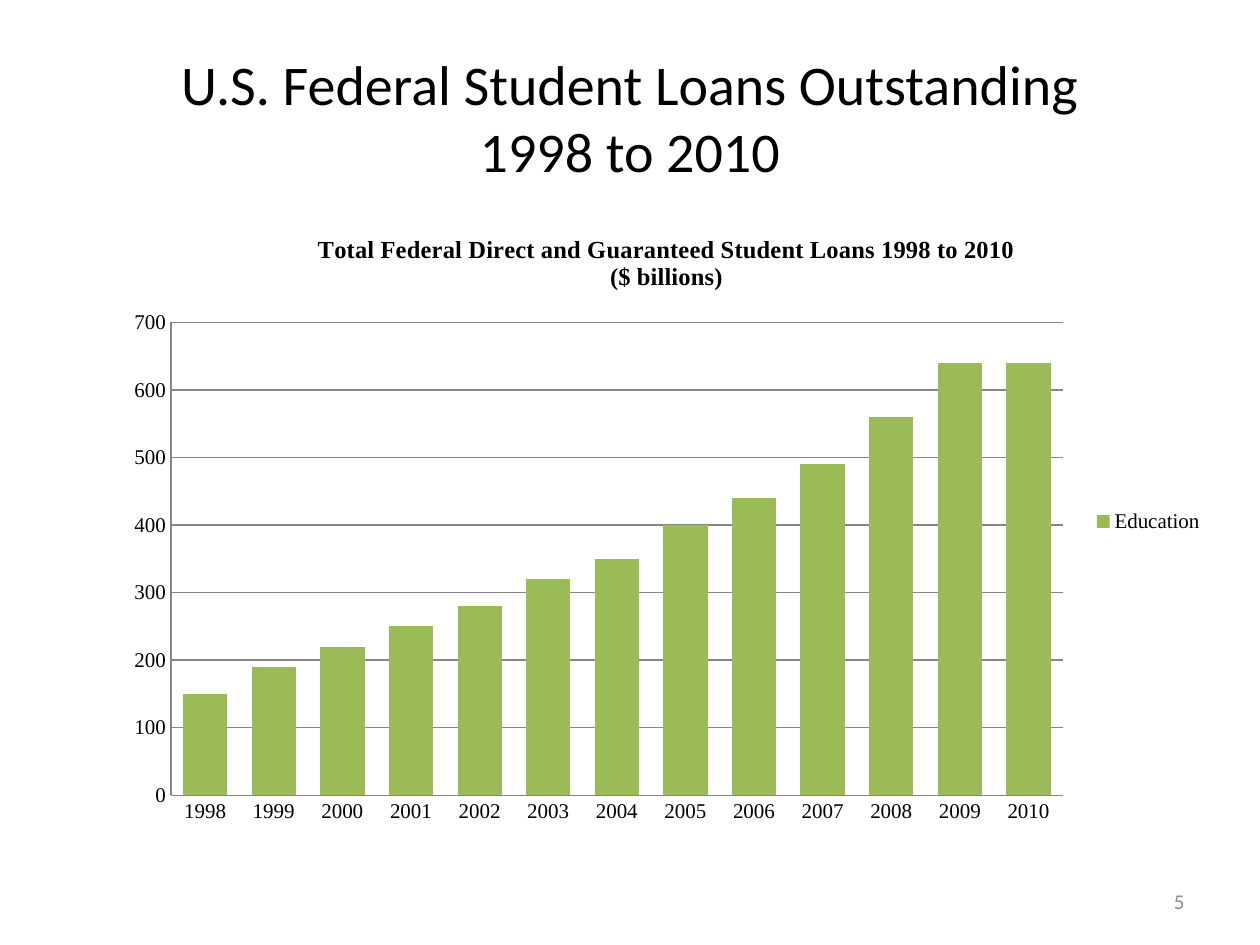
from lxml import etree
from pptx import Presentation
from pptx.chart.data import CategoryChartData
from pptx.dml.color import RGBColor
from pptx.enum.chart import XL_CHART_TYPE, XL_LEGEND_POSITION, XL_TICK_MARK
from pptx.enum.text import MSO_ANCHOR, PP_ALIGN
from pptx.oxml import parse_xml
from pptx.oxml.ns import nsdecls
from pptx.util import Pt

STACKED = XL_CHART_TYPE.COLUMN_STACKED
LEGEND_RIGHT = XL_LEGEND_POSITION.RIGHT
NO_TICK = XL_TICK_MARK.NONE
MIDDLE = MSO_ANCHOR.MIDDLE
CENTER, RIGHT = PP_ALIGN.CENTER, PP_ALIGN.RIGHT

COLORS = {"text": "000000", "number": "8C8C8C", "bar": "9BBB59", "grid": "868686"}
BODY_FONT, CHART_FONT = "Calibri", "Times New Roman"
YEARS = [str(year) for year in range(1998, 2011)]
LOANS = [150, 190, 220, 250, 280, 320, 350, 400, 440, 490, 560, 640, 640]
PLOT_AREA = {"x": 0.05, "y": 0.18, "w": 0.81, "h": 0.76}


def color(name):
    return RGBColor.from_string(COLORS[name])


def style_font(font, name, size, color_name, bold=False):
    font.name, font.size, font.bold = name, Pt(size), bold
    font.color.rgb = color(color_name)


def add_text(slide, box, lines, size, color_name, alignment):
    """Add a middle-anchored text box whose lines share one paragraph."""
    shape = slide.shapes.add_textbox(*map(Pt, box))
    frame = shape.text_frame
    frame.word_wrap = True
    frame.vertical_anchor = MIDDLE
    paragraph = frame.paragraphs[0]
    paragraph.alignment = alignment
    for index, line in enumerate(lines):
        if index:
            paragraph.add_line_break()
        run = paragraph.add_run()
        run.text = line
        style_font(run.font, BODY_FONT, size, color_name)


def set_plot_layout(chart):
    """Fix the inner plot area as fractions of the chart frame."""
    plot_area = chart.plots[0]._element.getparent()
    for old in plot_area.findall("{*}layout"):
        plot_area.remove(old)
    layout = parse_xml(f"<c:layout {nsdecls('c')}><c:manualLayout/></c:layout>")
    settings = {"layoutTarget": "inner", "xMode": "edge", "yMode": "edge", **PLOT_AREA}
    namespace = etree.QName(layout).namespace
    for tag, value in settings.items():
        etree.SubElement(layout[0], f"{{{namespace}}}{tag}", val=str(value))
    plot_area.insert(0, layout)


def style_line(line):
    line.color.rgb = color("grid")
    line.width = Pt(0.75)


def add_chart_title(chart, lines):
    chart.has_title = True
    chart.chart_title.include_in_layout = False
    frame = chart.chart_title.text_frame
    for index, line in enumerate(lines):
        paragraph = frame.add_paragraph() if index else frame.paragraphs[0]
        run = paragraph.add_run()
        run.text = line
        style_font(run.font, CHART_FONT, 14, "text", bold=True)


def add_loan_chart(slide, box):
    data = CategoryChartData()
    data.categories = YEARS
    data.add_series("Education", LOANS)
    chart = slide.shapes.add_chart(STACKED, *map(Pt, box), data).chart
    style_font(chart.font, CHART_FONT, 12, "text")
    add_chart_title(chart, ["Total Federal Direct and Guaranteed Student Loans 1998 to 2010",
                            "($ billions)"])
    chart.has_legend = True
    chart.legend.position = LEGEND_RIGHT
    chart.legend.include_in_layout = False

    plot = chart.plots[0]
    plot.gap_width, plot.overlap = 55, 100
    plot.vary_by_categories = False
    fill = plot.series[0].format.fill
    fill.solid()
    fill.fore_color.rgb = color("bar")

    for axis in (chart.category_axis, chart.value_axis):
        axis.major_tick_mark = axis.minor_tick_mark = NO_TICK
        style_line(axis.format.line)
    value_axis = chart.value_axis
    value_axis.minimum_scale, value_axis.maximum_scale = 0, 700
    value_axis.major_unit = 100
    value_axis.has_major_gridlines = True
    style_line(value_axis.major_gridlines.format.line)
    set_plot_layout(chart)


def main():
    presentation = Presentation()
    presentation.slide_width, presentation.slide_height = Pt(720), Pt(540)
    slide = presentation.slides.add_slide(presentation.slide_layouts[6])
    add_text(slide, (36, 21.6, 648, 90),
             ["U.S. Federal Student Loans Outstanding", "1998 to 2010"], 32, "text", CENTER)
    add_loan_chart(slide, (66.2, 120.2, 629.3, 355.7))
    add_text(slide, (516, 500.5, 168, 28.8), ["5"], 12, "number", RIGHT)
    presentation.save("out.pptx")


if __name__ == "__main__":
    main()
